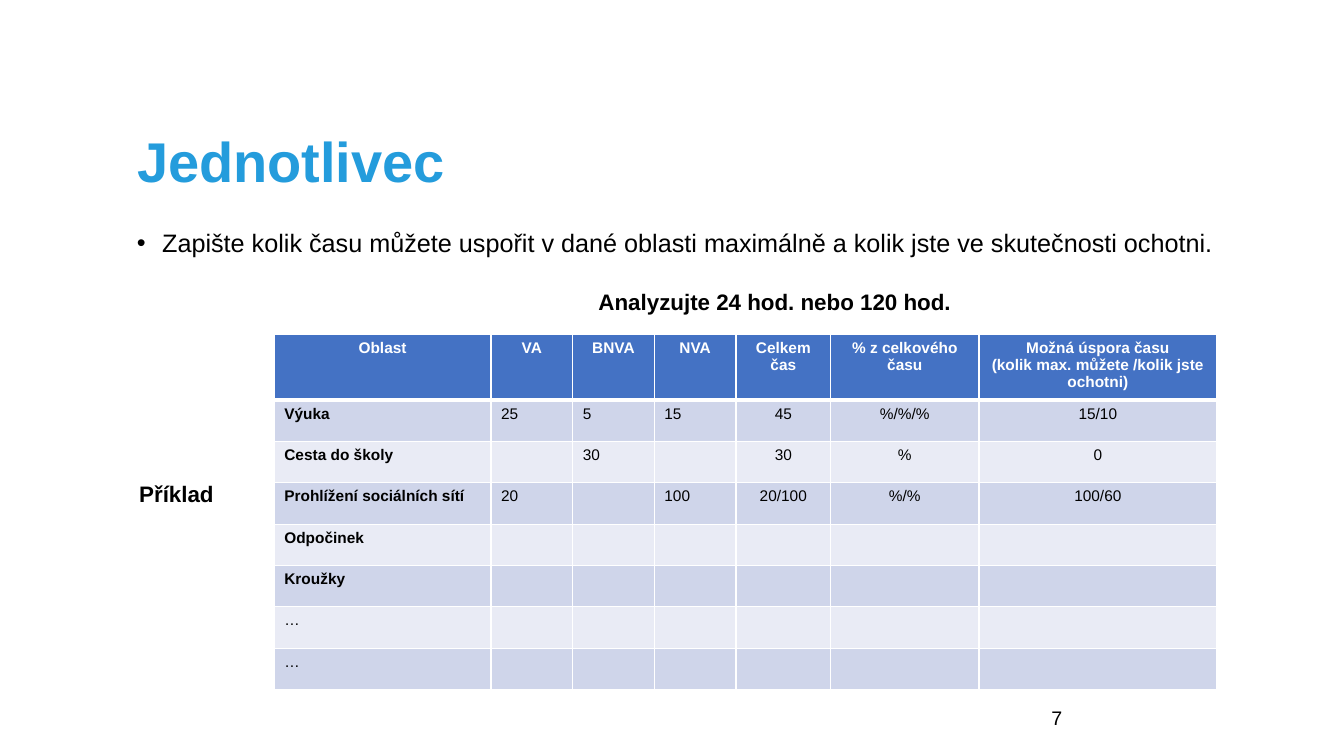
from dataclasses import dataclass

from lxml.etree import SubElement
from pptx import Presentation
from pptx.dml.color import RGBColor as Color
from pptx.enum.text import MSO_ANCHOR as Anchor, MSO_AUTO_SIZE as AutoSize, PP_ALIGN as Align
from pptx.oxml.ns import qn
from pptx.util import Emu, Pt

PX = 9144


@dataclass(frozen=True)
class Theme:
    font: str = "Arial"
    title: str = "249CDC"
    ink: str = "000000"
    white: str = "FFFFFF"
    header: str = "4472C4"
    odd_row: str = "CFD5EA"
    even_row: str = "E9EBF5"
    title_size: int = 40
    body_size: int = 18
    label_size: int = 16
    number_size: int = 14
    cell_size: int = 11


THEME = Theme()
COLUMNS = [215, 81, 81, 81, 94, 147, 236]
HEADER_HEIGHT, ROW_HEIGHT = 64, 41
FIRST_CENTRED_COLUMN = 4
ROWS = [
    ["Oblast", "VA", "BNVA", "NVA", "Celkem čas", "% z celkového času",
     "Možná úspora času\n(kolik max. můžete /kolik jste ochotni)"],
    ["Výuka", "25", "5", "15", "45", "%/%/%", "15/10"],
    ["Cesta do školy", "", "30", "", "30", "%", "0"],
    ["Prohlížení sociálních sítí", "20", "", "100", "20/100", "%/%", "100/60"],
    ["Odpočinek"],
    ["Kroužky"],
    ["…"],
    ["…"],
]


def px(length):
    return Emu(length * PX)


def format_text(frame, size, color=THEME.ink, bold=False, align=Align.LEFT):
    for para in frame.paragraphs:
        para.alignment = align
        for span in para.runs:
            span.font.name = THEME.font
            span.font.size = Pt(size)
            span.font.bold = bold
            span.font.color.rgb = Color.from_string(color)


def add_title(page, text, left, top, width, height):
    title = page.shapes.title
    title.left, title.top, title.width, title.height = map(px, (left, top, width, height))
    frame = title.text_frame
    frame.text = text
    frame.vertical_anchor = Anchor.MIDDLE
    frame.paragraphs[0].line_spacing = 0.9
    format_text(frame, THEME.title_size, THEME.title, bold=True)


def add_text(page, text, left, top, width, height, size, bold=False, align=Align.LEFT):
    box = page.shapes.add_textbox(*map(px, (left, top, width, height)))
    frame = box.text_frame
    frame.word_wrap = True
    frame.text = text
    format_text(frame, size, bold=bold, align=align)
    return box


def add_label(page, text, left, top, width, height):
    box = add_text(page, text, left, top, width, height, THEME.label_size, True, Align.CENTER)
    box.text_frame.auto_size = AutoSize.SHAPE_TO_FIT_TEXT


def add_bullet(page, text, left, top, width, height):
    box = add_text(page, text, left, top, width, height, THEME.body_size)
    para = box.text_frame.paragraphs[0]
    properties = para._p.get_or_add_pPr()
    properties.set("marL", str(px(25)))
    properties.set("indent", str(px(-25)))
    SubElement(properties, qn("a:buFont"), typeface=THEME.font)
    SubElement(properties, qn("a:buChar"), char="•")
    para.line_spacing = 0.9


def add_borders(cell, top, bottom):
    properties = cell._tc.get_or_add_tcPr()
    for side, points in (("L", 1), ("R", 1), ("T", top), ("B", bottom)):
        line = SubElement(properties, qn(f"a:ln{side}"), w=str(Pt(points)))
        fill = SubElement(line, qn("a:solidFill"))
        SubElement(fill, qn("a:srgbClr"), val=THEME.white)


def style_cell(cell, row, column):
    add_borders(cell, 3 if row == 1 else 1, 3 if row == 0 else 1)
    band = THEME.odd_row if row % 2 else THEME.even_row
    cell.fill.solid()
    cell.fill.fore_color.rgb = Color.from_string(THEME.header if row == 0 else band)
    centred = row == 0 or column >= FIRST_CENTRED_COLUMN
    format_text(
        cell.text_frame,
        THEME.cell_size,
        THEME.white if row == 0 else THEME.ink,
        row == 0 or (column == 0 and cell.text != "…"),
        Align.CENTER if centred else Align.LEFT,
    )


def add_time_table(page, left, top):
    height = HEADER_HEIGHT + ROW_HEIGHT * (len(ROWS) - 1)
    table = page.shapes.add_table(
        len(ROWS), len(COLUMNS), px(left), px(top), px(sum(COLUMNS)), px(height)
    ).table
    for column, width in zip(table.columns, COLUMNS):
        column.width = px(width)
    for row, texts in enumerate(ROWS):
        table.rows[row].height = px(ROW_HEIGHT if row else HEADER_HEIGHT)
        for column, text in enumerate(texts):
            table.cell(row, column).text = text
        for column in range(len(COLUMNS)):
            style_cell(table.cell(row, column), row, column)


def main():
    deck = Presentation()
    deck.slide_width, deck.slide_height = px(1333), px(750)
    page = deck.slides.add_slide(deck.slide_layouts[5])
    add_title(page, "Jednotlivec", 126, 84, 988, 158)
    add_bullet(
        page,
        "Zapište kolik času můžete uspořit v dané oblasti maximálně a kolik jste ve skutečnosti ochotni.",
        126, 224, 1118, 411,
    )
    add_text(page, "7", 1033, 695, 300, 40, THEME.number_size)
    add_label(page, "Analyzujte 24 hod. nebo 120 hod.", 568, 281, 401, 37)
    add_label(page, "Příklad", 94, 471, 162, 37)
    add_time_table(page, 272, 332)
    deck.save("out.pptx")


if __name__ == "__main__":
    main()
